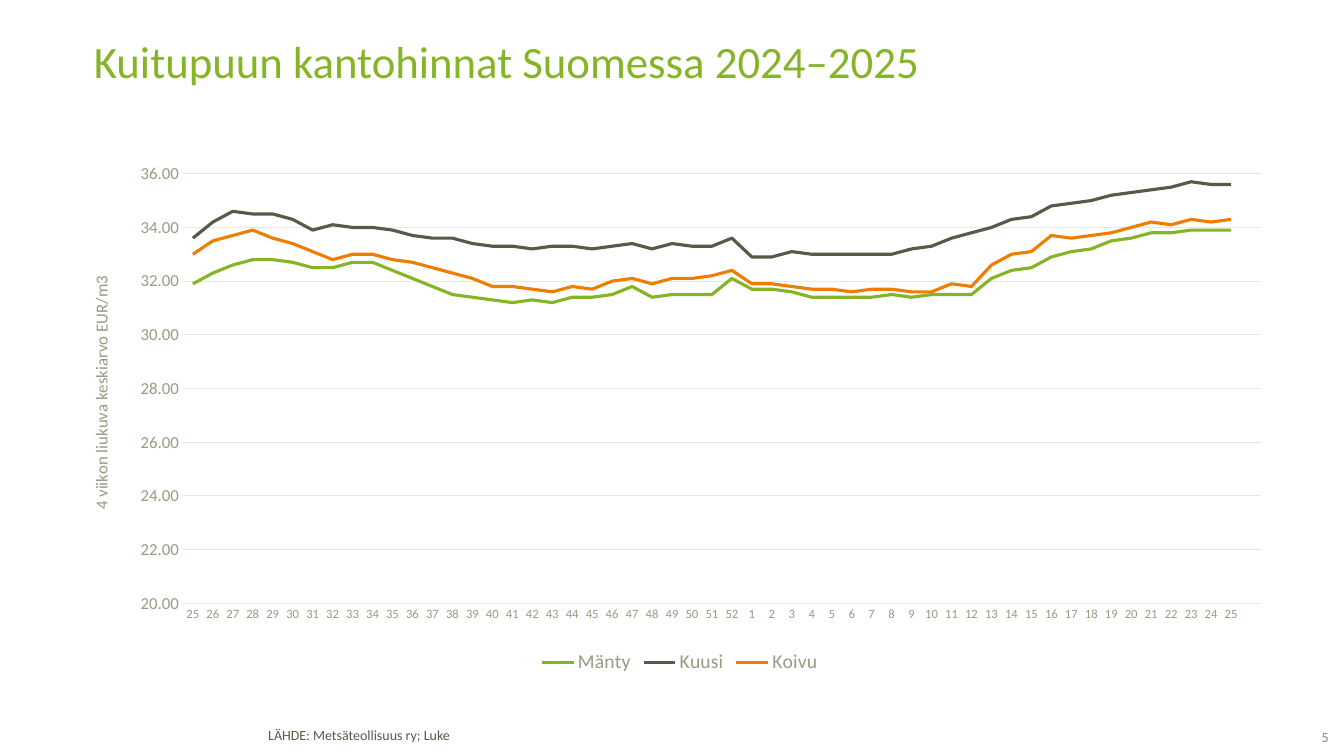
from dataclasses import dataclass
from lxml.etree import SubElement
from pptx import Presentation
from pptx.chart.data import CategoryChartData
from pptx.dml.color import RGBColor
from pptx.enum.chart import XL_CHART_TYPE, XL_LEGEND_POSITION, XL_TICK_MARK
from pptx.enum.text import MSO_ANCHOR, PP_ALIGN
from pptx.oxml.ns import qn
from pptx.util import Pt


@dataclass(frozen=True)
class Theme:
    """Fonts, colours and type sizes."""
    face: str = "Calibri"
    green: str = "85B526"
    dark: str = "59594A"
    orange: str = "EF7D00"
    label: str = "999984"
    grid: str = "E7E7E3"
    grey: str = "878787"
    head: int = 32
    key: int = 14
    axis: int = 12
    note: int = 10
    week: int = 9


THEME = Theme()
WEEKS = [str(n) for n in [*range(25, 53), *range(1, 26)]] + [""]
PRICES = [
    ("Mänty", THEME.green, [
        31.9, 32.3, 32.6, 32.8, 32.8, 32.7, 32.5, 32.5, 32.7, 32.7, 32.4, 32.1, 31.8, 31.5,
        31.4, 31.3, 31.2, 31.3, 31.2, 31.4, 31.4, 31.5, 31.8, 31.4, 31.5, 31.5, 31.5, 32.1,
        31.7, 31.7, 31.6, 31.4, 31.4, 31.4, 31.4, 31.5, 31.4, 31.5, 31.5, 31.5, 32.1, 32.4,
        32.5, 32.9, 33.1, 33.2, 33.5, 33.6, 33.8, 33.8, 33.9, 33.9, 33.9, None]),
    ("Kuusi", THEME.dark, [
        33.6, 34.2, 34.6, 34.5, 34.5, 34.3, 33.9, 34.1, 34, 34, 33.9, 33.7, 33.6, 33.6,
        33.4, 33.3, 33.3, 33.2, 33.3, 33.3, 33.2, 33.3, 33.4, 33.2, 33.4, 33.3, 33.3, 33.6,
        32.9, 32.9, 33.1, 33, 33, 33, 33, 33, 33.2, 33.3, 33.6, 33.8, 34, 34.3,
        34.4, 34.8, 34.9, 35, 35.2, 35.3, 35.4, 35.5, 35.7, 35.6, 35.6, None]),
    ("Koivu", THEME.orange, [
        33, 33.5, 33.7, 33.9, 33.6, 33.4, 33.1, 32.8, 33, 33, 32.8, 32.7, 32.5, 32.3,
        32.1, 31.8, 31.8, 31.7, 31.6, 31.8, 31.7, 32, 32.1, 31.9, 32.1, 32.1, 32.2, 32.4,
        31.9, 31.9, 31.8, 31.7, 31.7, 31.6, 31.7, 31.7, 31.6, 31.6, 31.9, 31.8, 32.6, 33,
        33.1, 33.7, 33.6, 33.7, 33.8, 34, 34.2, 34.1, 34.3, 34.2, 34.3, None]),
]


def style(font, size, color):
    """Set face, size and colour of a font."""
    font.name, font.size, font.bold = THEME.face, Pt(size), False
    font.color.rgb = RGBColor.from_string(color)


def rule(line, color, width):
    """Set colour and width of a line."""
    line.color.rgb = RGBColor.from_string(color)
    line.width = Pt(width)


def write(slide, box, text, size, color, space=1.0, align=PP_ALIGN.LEFT,
          anchor=MSO_ANCHOR.TOP, inset=(7.2, 3.6, 7.2, 3.6)):
    """Place one line of text in the box."""
    frame = slide.shapes.add_textbox(*map(Pt, box)).text_frame
    frame.word_wrap = True
    frame.vertical_anchor = anchor
    (frame.margin_left, frame.margin_top,
     frame.margin_right, frame.margin_bottom) = map(Pt, inset)
    para = frame.paragraphs[0]
    para.alignment, para.line_spacing = align, space
    run = para.add_run()
    run.text = text
    style(run.font, size, color)


def set_plot(chart, x, y, w, h):
    """Fix the inner plot area as shares of the chart."""
    area = chart.plots[0]._element.getparent()
    old = area.find(qn("c:layout"))
    if old is not None:
        area.remove(old)
    layout = SubElement(area, qn("c:layout"))
    area.insert(0, layout)
    manual = SubElement(layout, qn("c:manualLayout"))
    for tag, val in (("layoutTarget", "inner"), ("xMode", "edge"), ("yMode", "edge"),
                     ("x", x), ("y", y), ("w", w), ("h", h)):
        SubElement(manual, qn(f"c:{tag}")).set("val", str(val))


def set_axes(chart):
    """Style the week and price axes."""
    week, price = chart.category_axis, chart.value_axis
    for axis, size in ((week, THEME.week), (price, THEME.axis)):
        axis.major_tick_mark = axis.minor_tick_mark = XL_TICK_MARK.NONE
        style(axis.tick_labels.font, size, THEME.label)
    rule(week.format.line, THEME.grid, 0.75)
    price.format.line.fill.background()
    price.minimum_scale, price.maximum_scale, price.major_unit = 20, 36, 2
    price.tick_labels.number_format = "#,##0.00"
    price.tick_labels.number_format_is_linked = False
    price.has_major_gridlines = True
    rule(price.major_gridlines.format.line, THEME.grid, 0.75)
    run = price.axis_title.text_frame.paragraphs[0].add_run()
    run.text = "4 viikon liukuva keskiarvo EUR/m3"
    style(run.font, THEME.axis, THEME.label)


def draw_chart(slide, box):
    """Draw the weekly price lines in the box."""
    data = CategoryChartData(number_format="#,##0.00")
    data.categories = WEEKS
    for name, _, vals in PRICES:
        data.add_series(name, vals)
    chart = slide.shapes.add_chart(XL_CHART_TYPE.LINE, *map(Pt, box), data).chart
    style(chart.font, THEME.note, THEME.dark)
    chart.has_title = False
    chart.plots[0].vary_by_categories = False
    for line, (_, color, _) in zip(chart.plots[0].series, PRICES):
        line.smooth = False
        rule(line.format.line, color, 2.25)
    set_axes(chart)
    chart.has_legend = True
    chart.legend.position = XL_LEGEND_POSITION.BOTTOM
    chart.legend.include_in_layout = False
    style(chart.legend.font, THEME.key, THEME.label)
    set_plot(chart, 0.083, 0.03, 0.905, 0.826)


def draw_foot(slide, box):
    """Place the source and page number in the foot band."""
    x, y, w, h = box
    write(slide, (x, y, 517, h), "LÄHDE: Metsäteollisuus ry; Luke", THEME.note,
          THEME.dark, space=0.85)
    write(slide, (x + w - 38, y + 4, 38, 14), "5", THEME.note, THEME.grey,
          align=PP_ALIGN.RIGHT, anchor=MSO_ANCHOR.MIDDLE, inset=(0, 0, 0, 2.9))


def main():
    """Build and save the slide."""
    deck = Presentation()
    deck.slide_width, deck.slide_height = Pt(960), Pt(540)
    slide = deck.slides.add_slide(deck.slide_layouts[6])
    write(slide, (60, 28, 842, 70), "Kuitupuun kantohinnat Suomessa 2024–2025",
          THEME.head, THEME.green, space=0.8)
    draw_chart(slide, (60, 113, 851, 371.5))
    draw_foot(slide, (184.5, 517, 764.5, 19.5))
    deck.save("out.pptx")


if __name__ == "__main__":
    main()
